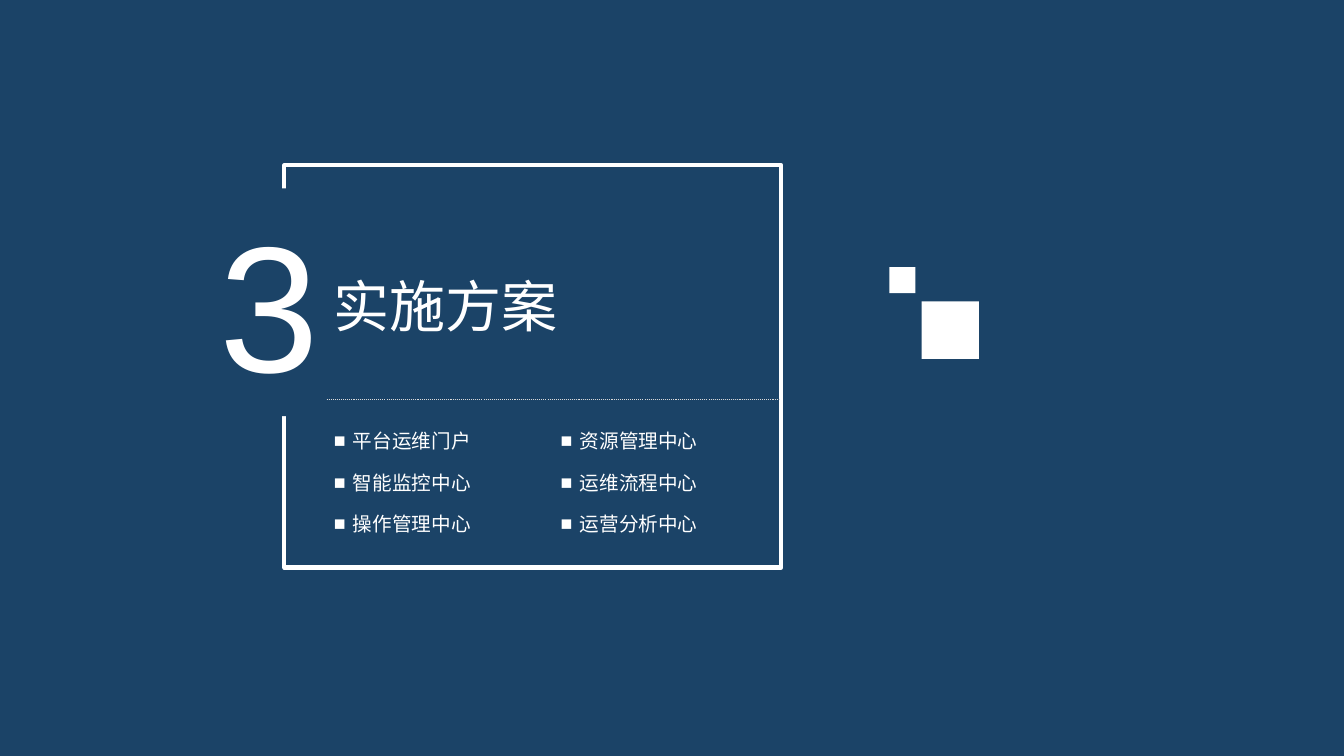
import dataclasses

import pptx
import pptx.dml.color
import pptx.enum.dml
import pptx.enum.shapes
import pptx.enum.text
import pptx.oxml
import pptx.oxml.ns
import pptx.util
from pptx.util import Inches

ALIGN = pptx.enum.text.PP_ALIGN
ANCHOR = pptx.enum.text.MSO_ANCHOR


@dataclasses.dataclass(frozen=True)
class Theme:
    navy: str = "1B4367"
    white: str = "FFFFFF"
    divider: str = "D9D9D9"
    cjk_font: str = "Noto Sans CJK SC"
    latin_font: str = "Arial"
    number_size: int = 128
    title_size: int = 40
    topic_size: int = 14
    topic_pitch: float = 29.6
    frame_width: float = 3
    divider_width: float = 0.75


THEME = Theme()

TITLE = "实施方案"
TOPIC_COLUMNS = [
    (3.24, ["平台运维门户", "智能监控中心", "操作管理中心"]),
    (5.49, ["资源管理中心", "运维流程中心", "运营分析中心"]),
]
ACCENT_SQUARES = [(8.82, 2.65, 0.26, 0.26), (9.14, 2.99, 0.57, 0.57)]


def rgb(value):
    return pptx.dml.color.RGBColor.from_string(value)


def place(element, left, top, width, height):
    element.left, element.top = Inches(left), Inches(top)
    element.width, element.height = Inches(width), Inches(height)


def prepare_frame(frame, anchor, wrap=True):
    frame.word_wrap = wrap
    frame.auto_size = pptx.enum.text.MSO_AUTO_SIZE.NONE
    frame.vertical_anchor = anchor
    frame.margin_left = frame.margin_right = Inches(0.07)
    frame.margin_top = frame.margin_bottom = Inches(0.05)


def add_run(paragraph, text, size, font_name):
    run = paragraph.add_run()
    run.text = text
    run.font.size = pptx.util.Pt(size)
    run.font.name = font_name
    run.font.color.rgb = rgb(THEME.white)
    east_asian = pptx.oxml.parse_xml(
        f'<a:ea {pptx.oxml.ns.nsdecls("a")} typeface="{font_name}"/>'
    )
    run.font._element.append(east_asian)


def add_square_bullet(paragraph):
    properties = paragraph._p.get_or_add_pPr()
    properties.set("marL", str(Inches(0.19)))
    properties.set("indent", str(-Inches(0.19)))
    properties.append(
        pptx.oxml.parse_xml(f'<a:buChar {pptx.oxml.ns.nsdecls("a")} char="■"/>')
    )


def add_rectangle(slide, left, top, width, height, fill=None, outline=None):
    rectangle = slide.shapes.add_shape(
        pptx.enum.shapes.MSO_SHAPE.RECTANGLE,
        Inches(left), Inches(top), Inches(width), Inches(height),
    )
    rectangle.shadow.inherit = False
    if fill:
        rectangle.fill.solid()
        rectangle.fill.fore_color.rgb = rgb(fill)
    else:
        rectangle.fill.background()
    if outline:
        rectangle.line.color.rgb = rgb(outline)
        rectangle.line.width = pptx.util.Pt(THEME.frame_width)
    else:
        rectangle.line.fill.background()
    return rectangle


def add_divider(slide, left, right, top):
    divider = slide.shapes.add_connector(
        pptx.enum.shapes.MSO_CONNECTOR.STRAIGHT,
        Inches(left), Inches(top), Inches(right), Inches(top),
    )
    divider.line.color.rgb = rgb(THEME.divider)
    divider.line.width = pptx.util.Pt(THEME.divider_width)
    divider.line.dash_style = pptx.enum.dml.MSO_LINE.ROUND_DOT
    divider._element.spPr.append(
        pptx.oxml.parse_xml(f'<a:effectLst {pptx.oxml.ns.nsdecls("a")}/>')
    )


def fill_title(title):
    place(title, 3.24, 2.64, 4.5, 0.77)
    prepare_frame(title.text_frame, ANCHOR.MIDDLE)
    heading = title.text_frame.paragraphs[0]
    heading.alignment = ALIGN.LEFT
    add_run(heading, TITLE, THEME.title_size, THEME.cjk_font)


def fill_topics(body, left, topics):
    place(body, left, 4.03, 1.68, 1.34)
    frame = body.text_frame
    prepare_frame(frame, ANCHOR.TOP)
    for index, topic in enumerate(topics):
        paragraph = frame.add_paragraph() if index else frame.paragraphs[0]
        paragraph.alignment = ALIGN.LEFT
        paragraph.line_spacing = pptx.util.Pt(THEME.topic_pitch)
        paragraph.space_before = paragraph.space_after = pptx.util.Pt(0)
        add_square_bullet(paragraph)
        add_run(paragraph, topic, THEME.topic_size, THEME.cjk_font)


def add_section_number(slide, number):
    block = add_rectangle(slide, 2.11, 1.87, 1.13, 2.26, fill=THEME.navy)
    prepare_frame(block.text_frame, ANCHOR.TOP, wrap=False)
    paragraph = block.text_frame.paragraphs[0]
    paragraph.alignment = ALIGN.CENTER
    add_run(paragraph, number, THEME.number_size, THEME.latin_font)


def main():
    deck = pptx.Presentation()
    deck.slide_width, deck.slide_height = Inches(13.33), Inches(7.5)
    slide = deck.slides.add_slide(deck.slide_layouts.get_by_name("Two Content"))
    slide.background.fill.solid()
    slide.background.fill.fore_color.rgb = rgb(THEME.navy)

    title, *bodies = slide.placeholders
    fill_title(title)
    for body, (left, topics) in zip(bodies, TOPIC_COLUMNS):
        fill_topics(body, left, topics)

    add_rectangle(slide, 2.82, 1.64, 4.93, 3.99, outline=THEME.white)
    add_section_number(slide, "3")
    for square in ACCENT_SQUARES:
        add_rectangle(slide, *square, fill=THEME.white)
    add_divider(slide, 3.24, 7.74, 3.96)

    deck.save("out.pptx")


if __name__ == "__main__":
    main()
